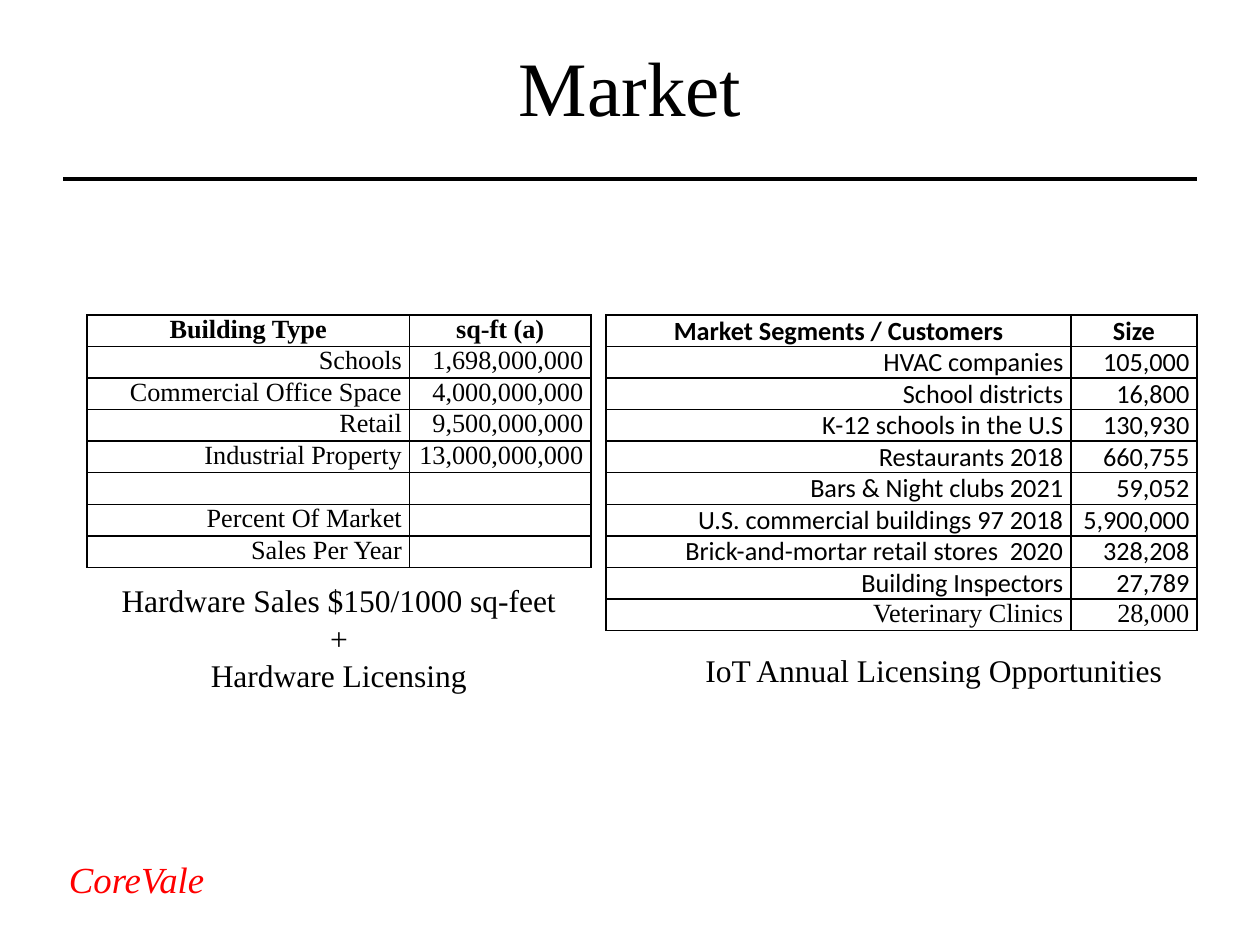
from lxml.etree import SubElement
from pptx import Presentation
from pptx.dml.color import RGBColor
from pptx.enum.shapes import MSO_CONNECTOR
from pptx.enum.text import MSO_ANCHOR, PP_ALIGN
from pptx.oxml import parse_xml
from pptx.oxml.ns import nsdecls, qn
from pptx.util import Inches, Pt

COLORS = {"ink": "000000", "brand": "FF0000"}
SERIF, SANS = "Times New Roman", "Calibri"
ROW = 0.25

deck = Presentation()
deck.slide_width, deck.slide_height = Inches(10), Inches(7.5)
slide = deck.slides.add_slide(deck.slide_layouts[6])
shapes = slide.shapes


def style(para, size, face=SERIF, color="ink", bold=False, italic=False):
    for run in para.runs:
        font = run.font
        font.name, font.size = face, Pt(size)
        font.bold, font.italic = bold, italic
        font.color.rgb = RGBColor.from_string(COLORS[color])


def add_text(text, left, top, width, height, size, align=PP_ALIGN.CENTER,
             wrap=True, **look):
    box = shapes.add_textbox(*map(Inches, (left, top, width, height)))
    frame = box.text_frame
    frame.text, frame.word_wrap = text, wrap
    for para in frame.paragraphs:
        para.alignment = align
        style(para, size, **look)
    return frame


# Footer name and rule under the title
add_text("CoreVale", 0.25, 6.75, 1.67, 0.45, 21, color="brand", italic=True)
rule = shapes.add_connector(MSO_CONNECTOR.STRAIGHT, Inches(0.5), Inches(1.42),
                            Inches(9.5), Inches(1.42))
rule.line.width = Pt(2)
rule.line.color.rgb = RGBColor.from_string(COLORS["ink"])
SubElement(rule._element.spPr, qn("a:effectLst"))

# Title
title = add_text("Market", 0.69, 0, 8.62, 1.45, 44)
title.vertical_anchor = MSO_ANCHOR.MIDDLE
title.paragraphs[0].line_spacing = 0.9

# Table contents
areas = [
    ("Building Type", "sq-ft (a)"),
    ("Schools", "1,698,000,000"),
    ("Commercial Office Space", "4,000,000,000"),
    ("Retail", "9,500,000,000"),
    ("Industrial Property", "13,000,000,000"),
    ("", ""),
    ("Percent Of Market", ""),
    ("Sales Per Year", ""),
]
segments = [
    ("Market Segments / Customers", "Size"),
    ("HVAC companies", "105,000"),
    ("School districts", "16,800"),
    ("K-12 schools in the U.S", "130,930"),
    ("Restaurants 2018", "660,755"),
    ("Bars & Night clubs 2021", "59,052"),
    ("U.S. commercial buildings 97 2018", "5,900,000"),
    ("Brick-and-mortar retail stores  2020", "328,208"),
    ("Building Inspectors", "27,789"),
    ("Veterinary Clinics", "28,000"),
]

# Tables: left edge, column widths, rows, face of each row
tables = [
    (0.69, (2.56, 1.44), areas, [SERIF] * 8),
    (4.81, (3.69, 1), segments, [SANS] * 9 + [SERIF]),
]
for left, widths, rows, faces in tables:
    table = shapes.add_table(len(rows), 2, Inches(left), Inches(2.5),
                             Inches(sum(widths)), Inches(ROW * len(rows))).table
    table.horz_banding = table.first_row = False
    for col, width in zip(table.columns, widths):
        col.width = Inches(width)
    for r, (row, face) in enumerate(zip(rows, faces)):
        table.rows[r].height = Inches(ROW)
        for c, text in enumerate(row):
            cell = table.cell(r, c)
            cell.margin_left = cell.margin_right = Inches(0.06)
            cell.margin_top = cell.margin_bottom = 0
            cell.fill.background()
            para = cell.text_frame.paragraphs[0]
            para.alignment = PP_ALIGN.RIGHT if r else PP_ALIGN.CENTER
            if text:
                para.text = text
                style(para, 15, face, bold=r == 0)
            else:
                # Keep an empty cell as low as its row
                SubElement(para._p, qn("a:endParaRPr")).set("sz", "1500")
            # Cell borders
            props = cell._tc.get_or_add_tcPr()
            for i, side in enumerate("LRTB"):
                props.insert(i, parse_xml(
                    f'<a:ln{side} {nsdecls("a")} w="12700"><a:solidFill>'
                    f'<a:srgbClr val="{COLORS["ink"]}"/></a:solidFill></a:ln{side}>'))

# Captions
add_text("Hardware Sales $150/1000 sq-feet\n+\nHardware Licensing",
         0.69, 4.56, 4, 1.01, 18)
add_text("IoT Annual Licensing Opportunities", 5.5, 5.12, 3.86, 0.4, 18,
         align=PP_ALIGN.LEFT, wrap=False)

deck.save("out.pptx")
